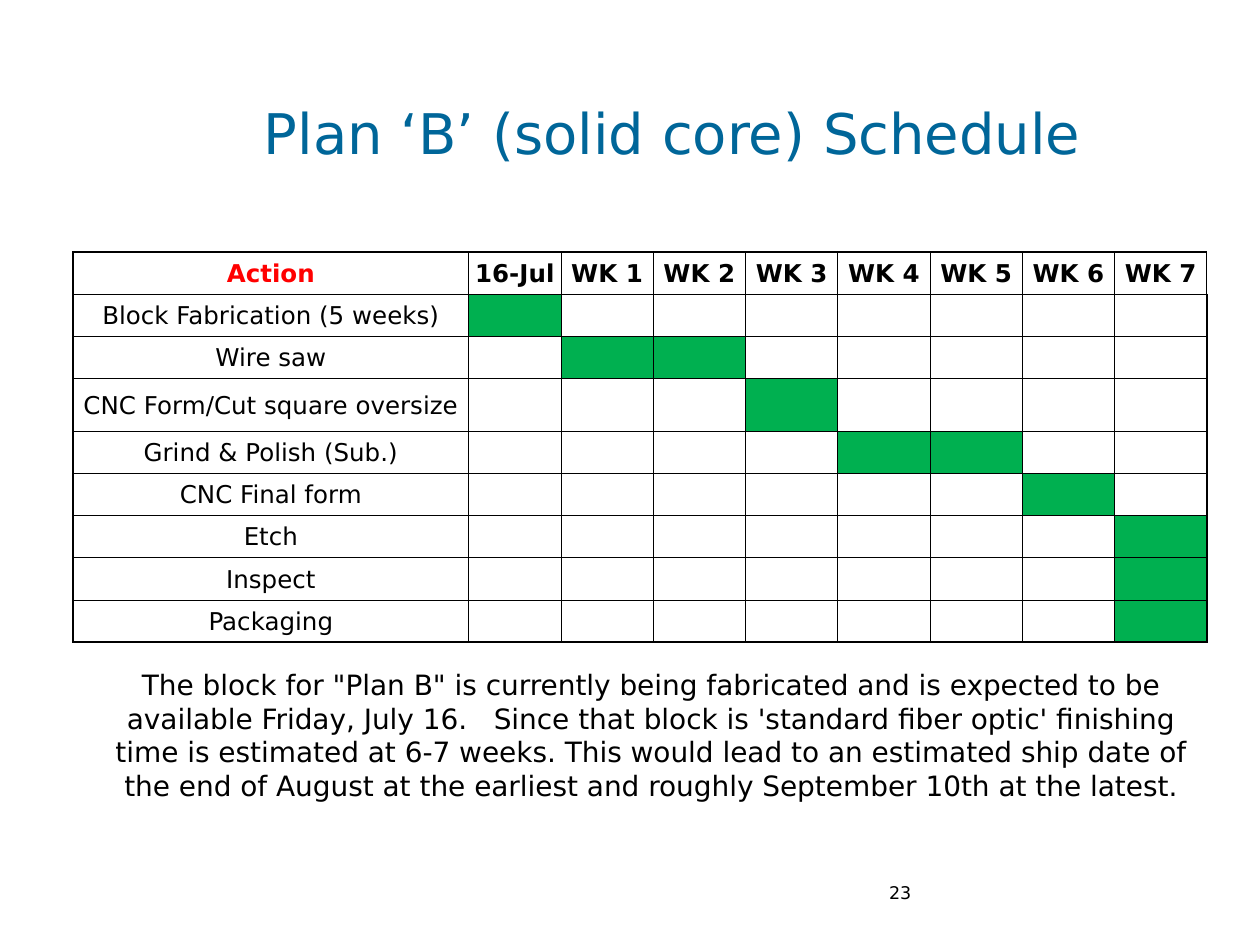
from lxml.etree import SubElement
from pptx import Presentation
from pptx.dml.color import RGBColor
from pptx.enum.text import MSO_ANCHOR as Anchor, PP_ALIGN as Align
from pptx.oxml.ns import qn
from pptx.util import Inches, Pt

# Content
TITLE = "Plan ‘B’ (solid core) Schedule"
PERIODS = ["16-Jul"] + [f"WK {week}" for week in range(1, 8)]
# Each action with the period columns it occupies
ACTIONS = [
    ("Block Fabrication (5 weeks)", [1]),
    ("Wire saw", [2, 3]),
    ("CNC Form/Cut square oversize", [4]),
    ("Grind & Polish (Sub.)", [5, 6]),
    ("CNC Final form", [7]),
    ("Etch", [8]),
    ("Inspect", [8]),
    ("Packaging", [8]),
]
SUMMARY = (
    "The block for \"Plan B\" is currently being fabricated and is expected to be "
    "available Friday, July 16.   Since that block is 'standard fiber optic' finishing "
    "time is estimated at 6-7 weeks. This would lead to an estimated ship date of "
    "the end of August at the earliest and roughly September 10th at the latest."
)
PAGE_NUMBER = "23"

# Style and measures
FONT = "DejaVu Sans"
BLACK, RED, GREEN, BLUE = "000000", "FF0000", "00B050", "006699"
TABLE_LEFT, TABLE_TOP, TABLE_WIDTH, TABLE_HEIGHT = 0.58, 2, 9, 3.1
ACTION_WIDTH = 3.14
TALL_ROW, TALL_HEIGHT = 3, 0.42
THIN, THICK = 0.5, 1


def rgb(hex_color):
    return RGBColor.from_string(hex_color)


def style_font(font, size, color, bold=False):
    font.name, font.size, font.bold = FONT, Pt(size), bold
    font.color.rgb = rgb(color)


def write(frame, text, size, color, align, bold=False):
    paragraph = frame.paragraphs[0]
    paragraph.alignment = align
    run = paragraph.add_run()
    run.text = text
    style_font(run.font, size, color, bold)


def place(shape, left, top, width, height):
    shape.left, shape.top = Inches(left), Inches(top)
    shape.width, shape.height = Inches(width), Inches(height)


def add_borders(cell, widths):
    properties = cell._tc.get_or_add_tcPr()
    for side in ("L", "R", "T", "B"):
        line = SubElement(properties, qn(f"a:ln{side}"), w=str(Pt(widths[side])))
        solid = SubElement(line, qn("a:solidFill"))
        SubElement(solid, qn("a:srgbClr"), val=BLACK)


prs = Presentation()
prs.slide_width, prs.slide_height = Inches(10), Inches(7.5)
slide = prs.slides.add_slide(prs.slide_layouts[5])

# Title
title = slide.shapes.title
place(title, 1.08, 0.42, 8.52, 1.25)
title.text_frame.vertical_anchor = Anchor.MIDDLE
write(title.text_frame, TITLE, 32, BLUE, Align.CENTER)

# Schedule table
row_count, column_count = len(ACTIONS) + 1, len(PERIODS) + 1
schedule = slide.shapes.add_table(
    row_count, column_count, Inches(TABLE_LEFT), Inches(TABLE_TOP),
    Inches(TABLE_WIDTH), Inches(TABLE_HEIGHT)).table
schedule.first_row = schedule.horz_banding = False

period_width = (TABLE_WIDTH - ACTION_WIDTH) / len(PERIODS)
for c, column in enumerate(schedule.columns):
    column.width = Inches(period_width if c else ACTION_WIDTH)
row_height = (TABLE_HEIGHT - TALL_HEIGHT) / (row_count - 1)
for r, row in enumerate(schedule.rows):
    row.height = Inches(TALL_HEIGHT if r == TALL_ROW else row_height)

rows = [(["Action"] + PERIODS, [])]
rows += [([action] + [""] * len(PERIODS), active) for action, active in ACTIONS]
for r, (labels, active) in enumerate(rows):
    for c, label in enumerate(labels):
        cell = schedule.cell(r, c)
        cell.margin_left = cell.margin_right = cell.margin_top = Inches(0.01)
        cell.margin_bottom = 0
        cell.vertical_anchor = Anchor.MIDDLE
        add_borders(cell, {
            "L": THICK if c == 0 else THIN,
            "R": THICK if r and c == column_count - 1 else THIN,
            "T": THICK if r == 0 else THIN,
            "B": THICK if r == row_count - 1 else THIN,
        })
        if c in active:
            cell.fill.solid()
            cell.fill.fore_color.rgb = rgb(GREEN)
        else:
            cell.fill.background()
        if label:
            color = RED if r == c == 0 else BLACK
            write(cell.text_frame, label, 14, color, Align.CENTER, bold=r == 0)
        else:
            style_font(cell.text_frame.paragraphs[0].font, 14, BLACK)

# Summary and page number
for text, box, size, align, anchor in [
    (SUMMARY, (0.67, 5.25, 9, 1.18), 16, Align.CENTER, Anchor.TOP),
    (PAGE_NUMBER, (6.75, 6.83, 0.58, 0.5), 10, Align.RIGHT, Anchor.MIDDLE),
]:
    frame = slide.shapes.add_textbox(*map(Inches, box)).text_frame
    frame.word_wrap = True
    frame.vertical_anchor = anchor
    write(frame, text, size, BLACK, align)

prs.save("out.pptx")
